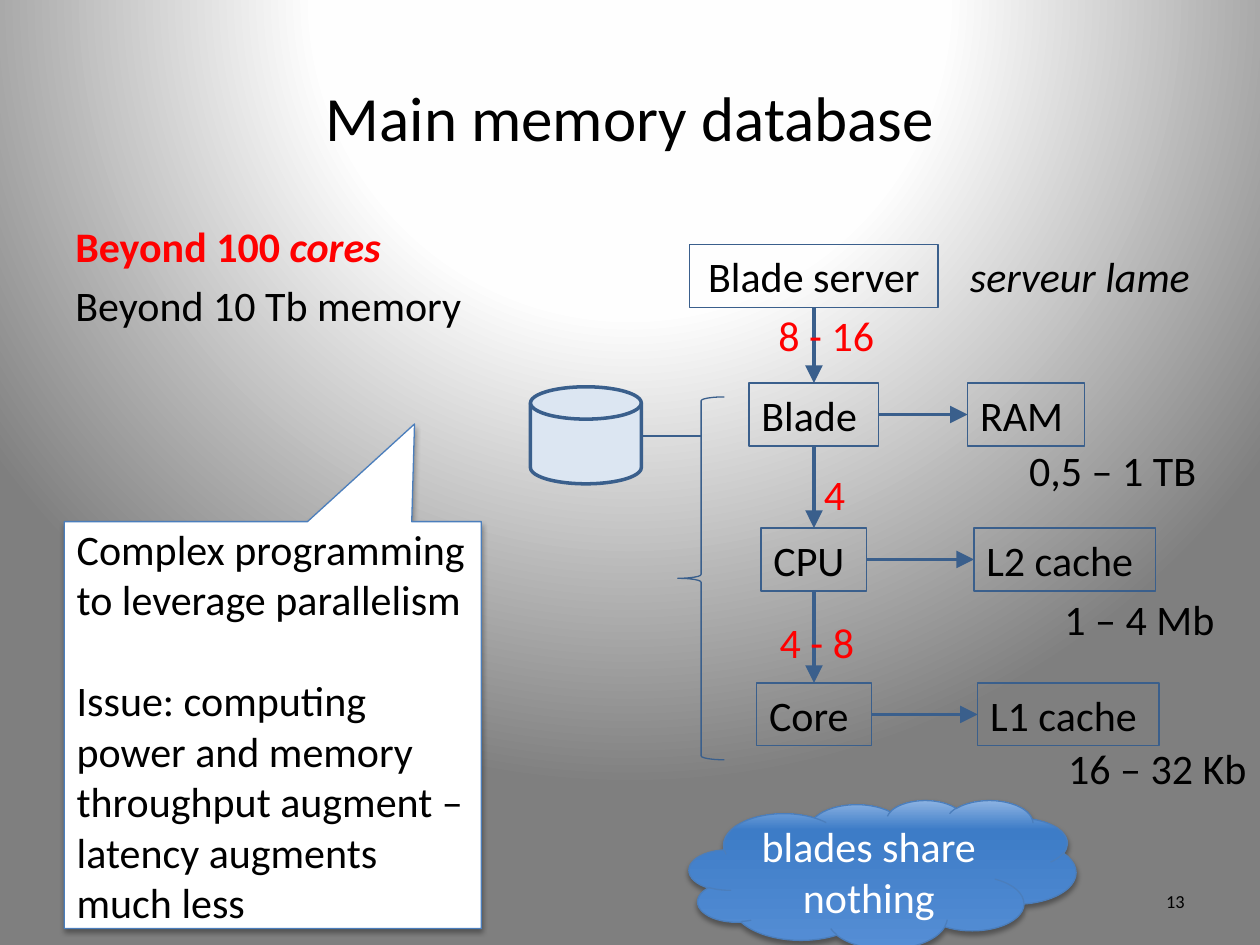
import pptx
import pptx.util
import pptx.oxml
import pptx.oxml.ns
import pptx.dml.color
import pptx.enum.shapes
import pptx.enum.text
import lxml.etree

COLS, ROWS = 100, 75            # grid cells across and down the slide
WIDE, HIGH = pptx.util.Inches(10), pptx.util.Inches(7.5)
HUES = {"ink": "000000", "red": "FF0000", "white": "FFFFFF", "line": "3A5F8C",
        "edge": "4B7EBC", "disk": "DCE6F2", "mist": "FEFEFE", "grey": "7F7F7F",
        "base": "558ED5", "deep": "3D7CC7", "light": "8EB4E3"}
FONT = "Calibri"
KINDS = pptx.enum.shapes.MSO_SHAPE
ALIGN = pptx.enum.text.PP_ALIGN
MIDDLE = pptx.enum.text.MSO_ANCHOR.MIDDLE
NS = pptx.oxml.ns.nsdecls("a")
TALL = 5                        # rows in a one-line box
AXIS = 64.6                     # column that the server chain runs down


def hue(name):
    return pptx.dml.color.RGBColor.from_string(HUES[name])


def place(col, row, wide, high):
    return (round(WIDE * col / COLS), round(HIGH * row / ROWS),
            round(WIDE * wide / COLS), round(HIGH * high / ROWS))


def blend(fill, node, stops, shade):
    """Give the fill inside node a gradient of (share, hue) stops."""
    fill.gradient()
    marks = "".join(f'<a:gs pos="{share * 1000}"><a:srgbClr val="{HUES[name]}"/></a:gs>'
                    for share, name in stops)
    grad = pptx.oxml.parse_xml(
        f'<a:gradFill {NS} rotWithShape="1"><a:gsLst>{marks}</a:gsLst>{shade}</a:gradFill>')
    old = next(node.iter(pptx.oxml.ns.qn("a:gradFill")))
    old.getparent().replace(old, grad)


def style(para, size, tone, bold=False, slant=False):
    for run in para.runs:
        font = run.font
        font.name, font.size = FONT, pptx.util.Pt(size)
        font.color.rgb = hue(tone)
        font.bold, font.italic = bold, slant


def write(shape, text, size=24, tone="ink", align=ALIGN.LEFT, wrap=True,
          anchor=None, slant=False):
    frame = shape.text_frame
    frame.text = text
    frame.word_wrap = wrap
    frame.vertical_anchor = anchor or pptx.enum.text.MSO_ANCHOR.TOP
    for para in frame.paragraphs:
        para.alignment = align
        style(para, size, tone, slant=slant)
    return frame


def label(slide, text, spot, **look):
    return write(slide.shapes.add_textbox(*place(*spot)), text, **look)


def form(slide, kind, spot, fill=None, line="line", width=0.75):
    shape = slide.shapes.add_shape(kind, *place(*spot))
    shape.shadow.inherit = False
    if fill:
        shape.fill.solid()
        shape.fill.fore_color.rgb = hue(fill)
    else:
        shape.fill.background()
    shape.line.color.rgb = hue(line)
    shape.line.width = pptx.util.Pt(width)
    return shape


def box(slide, text, col, row, wide, align=ALIGN.LEFT):
    shape = form(slide, KINDS.RECTANGLE, (col, row, wide, TALL))
    write(shape, text, align=align)
    return shape


def rule(slide, start, end, width=0.75):
    """Draw a straight line between two grid points."""
    link = slide.shapes.add_connector(pptx.enum.shapes.MSO_CONNECTOR.STRAIGHT,
                                      *place(*start, *end))
    link.line.color.rgb = hue("line")
    link.line.width = pptx.util.Pt(width)
    props = link._element.spPr
    lxml.etree.SubElement(props, pptx.oxml.ns.qn("a:effectLst"))
    return link


def arrow(slide, first, side, last, goal):
    link = rule(slide, (0, 0), (0, 0), 2)
    link.begin_connect(first, side)
    link.end_connect(last, goal)
    line = link.line._get_or_add_ln()
    lxml.etree.SubElement(line, pptx.oxml.ns.qn("a:tailEnd"),
                          type="triangle", w="lg", len="lg")


def shade(shape):
    """Cast a soft shadow straight down."""
    props = shape._element.spPr
    cast = props.find(pptx.oxml.ns.qn("a:effectLst"))
    cast.append(pptx.oxml.parse_xml(
        f'<a:outerShdw {NS} blurRad="39370" dist="22860" dir="5400000" rotWithShape="0">'
        '<a:srgbClr val="000000"><a:alpha val="35000"/></a:srgbClr></a:outerShdw>'))


def scene(slide):
    blend(slide.background.fill, slide._element,
          [(0, "white"), (40, "mist"), (100, "grey")],
          '<a:path path="circle"><a:fillToRect l="50000" t="-80000" '
          'r="50000" b="180000"/></a:path>')


def points(slide):
    frame = label(slide, "Beyond 100 \nBeyond 10 Tb memory", (5, 17, 41.9, 50))
    first = frame.paragraphs[0]
    first.add_run().text = "cores"
    style(first, 24, "red", bold=True)
    first.runs[1].font.italic = True
    for para in frame.paragraphs:
        para.space_before = pptx.util.Pt(4.8)


def chain(slide):
    # Each level: name, row, width, its memory (name, column, width)
    levels = [("Blade server", 19.4, 19.7, None),
              ("Blade", 30.4, 10.3, ("RAM", 76.8, 9.3)),
              ("CPU", 41.9, 8.4, ("L2 cache", 77.3, 14.4)),
              ("Core", 54.2, 9.1, ("L1 cache", 77.6, 14.4))]
    above = None
    for name, row, wide, store in levels:
        align = ALIGN.LEFT if store else ALIGN.CENTER
        node = box(slide, name, AXIS - wide / 2, row, wide, align)
        if above:
            arrow(slide, above, 2, node, 0)
        if store:
            text, col, span = store
            arrow(slide, node, 3, box(slide, text, col, row, span), 1)
        above = node

    # Counts on the arrows, then sizes under the memories
    for text, col, row, wide, tone in [
            ("8 - 16", 60.8, 24.1, 9.7, "red"), ("4", 64.4, 36.7, 3.7, "red"),
            ("4 - 8", 60.9, 48.4, 8, "red"), ("0,5 – 1 TB", 80.7, 34.8, 15.4, "ink"),
            ("1 – 4 Mb", 83.5, 46.6, 14, "ink"), ("16 – 32 Kb", 83.8, 58.4, 16.3, "ink")]:
        label(slide, text, (col, row, wide, TALL), tone=tone, wrap=False)
    label(slide, "serveur lame", (76, 19.4, 20.4, TALL), wrap=False, slant=True)


def disk(slide):
    form(slide, KINDS.LEFT_BRACE, (53.8, 31.5, 3.7, 28.8))
    form(slide, KINDS.FLOWCHART_MAGNETIC_DISK, (42.1, 30.7, 8.8, 7.7), "disk", width=2)
    rule(slide, (50.9, 34.6), (55.7, 34.6))


def cloud(slide):
    shape = form(slide, KINDS.CLOUD, (54.7, 63.5, 30.7, 11.8), line="edge")
    blend(shape.fill, shape._element.spPr, [(0, "base"), (80, "deep"), (100, "light")],
          '<a:lin ang="16200000" scaled="0"/>')
    shade(shape)
    write(shape, "blades share nothing", tone="white", align=ALIGN.CENTER, anchor=MIDDLE)


def callout(slide):
    shape = form(slide, KINDS.RECTANGULAR_CALLOUT, (5.1, 41.4, 33.1, 32.3), "white", "edge")
    shape.adjustments[0], shape.adjustments[1] = 0.34, -0.74
    shade(shape)
    frame = write(shape, "Complex programming to leverage parallelism\n"
                  "Issue: computing power and memory throughput augment – "
                  "latency augments much less", anchor=MIDDLE)
    frame.paragraphs[1].space_before = pptx.util.Pt(29)


def main():
    deck = pptx.Presentation()
    deck.slide_width, deck.slide_height = WIDE, HIGH
    slide = deck.slides.add_slide(deck.slide_layouts[6])
    scene(slide)
    label(slide, "Main memory database", (5, 3, 90, 12.5), size=36,
          align=ALIGN.CENTER, anchor=MIDDLE)
    points(slide)
    chain(slide)
    disk(slide)
    cloud(slide)
    callout(slide)
    label(slide, "13", (71.7, 69.5, 23.3, 4), size=10.5, align=ALIGN.RIGHT, anchor=MIDDLE)
    deck.save("out.pptx")


if __name__ == "__main__":
    main()
